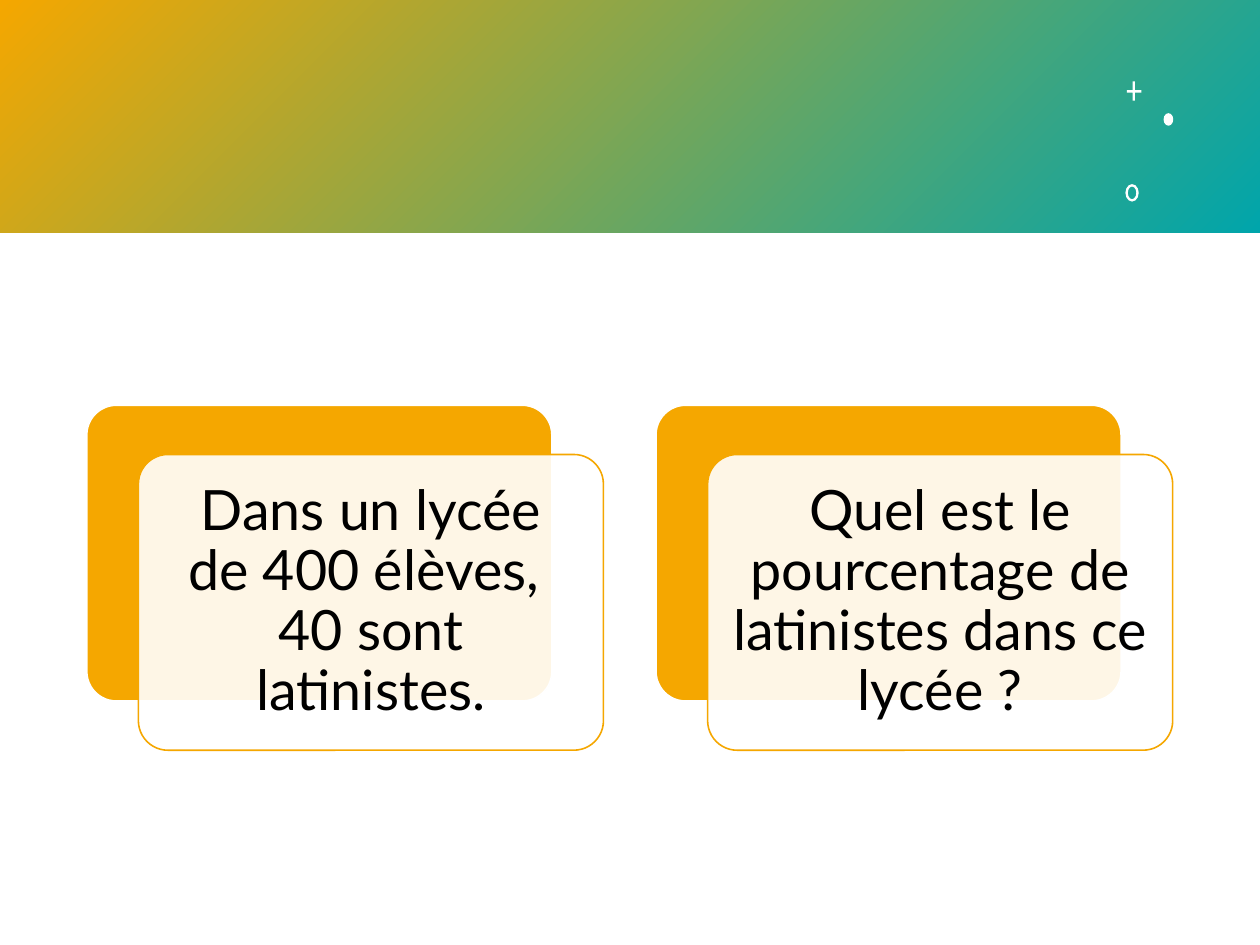
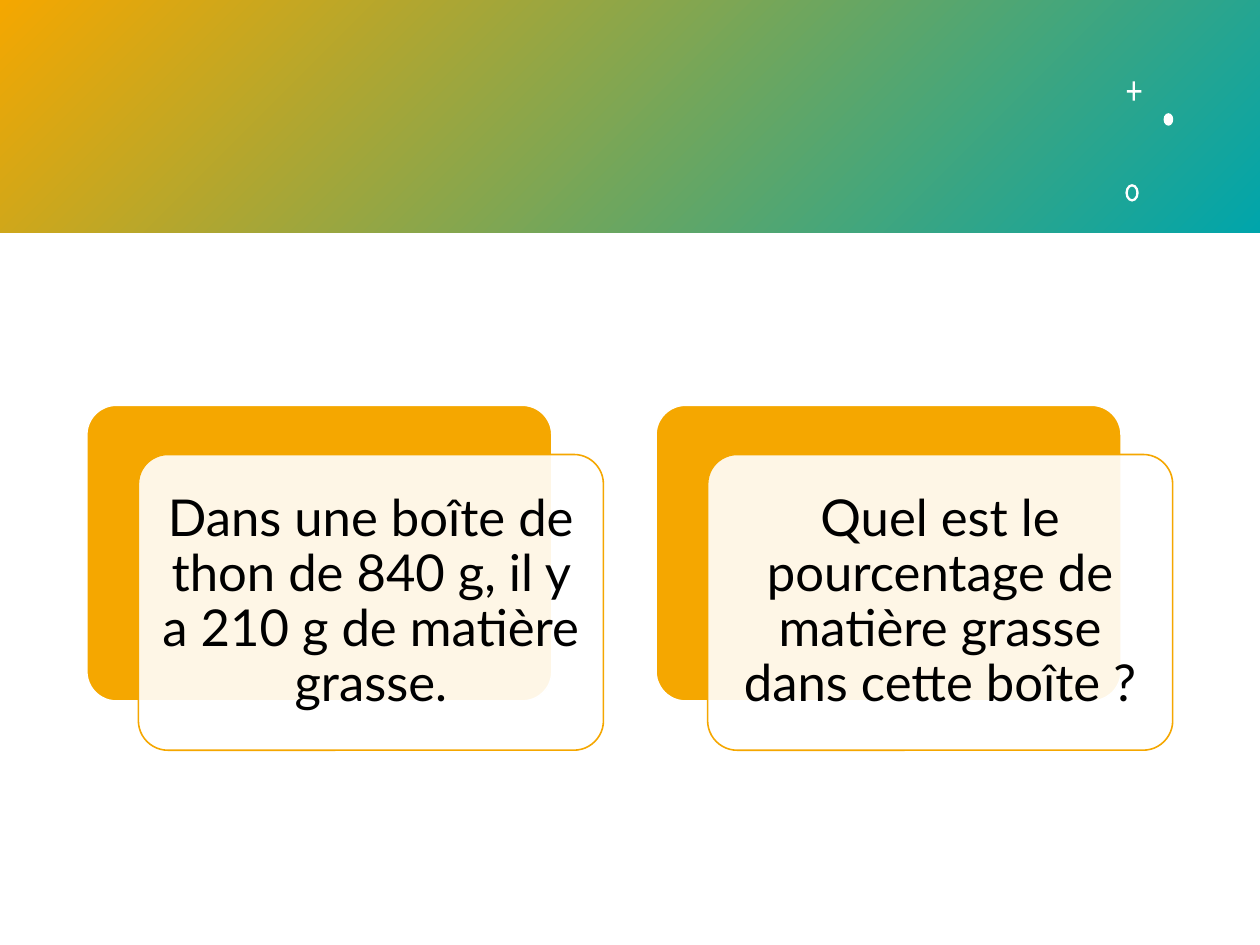
"""Build two percentage exercises, each with a fact card and a question card."""
from lxml.etree import SubElement
from pptx import Presentation
from pptx.dml.color import RGBColor
from pptx.enum.shapes import MSO_SHAPE
from pptx.enum.text import MSO_ANCHOR, PP_ALIGN
from pptx.oxml.ns import qn
from pptx.util import Pt

ORANGE, TEAL, WHITE, BLACK = "F5A700", "00A5AB", "FFFFFF", "000000"
FONT = "Lato"
WIDTH, HEIGHT, BAND_HEIGHT = 793.75, 595.25, 146.6
CARD_WIDTH, CARD_HEIGHT = 293, 186.3
CARD_LEFT, CARD_TOP, CARD_STEP = 54.7, 255.3, 358.6
FRONT_SHIFT_X, FRONT_SHIFT_Y = 32.5, 31

EXERCISES = [
    (35, [["Dans un lycée de 400 élèves, ", "40 sont latinistes."],
          ["Quel est le pourcentage de latinistes dans ce lycée ?"]]),
    (32, [["Dans une boîte de thon de 840 g, il y a 210 g de matière grasse."],
          ["Quel est le pourcentage de matière grasse dans cette boîte ?"]]),
]

PLUS_OUTLINE = [
    (713.5, 51.3), (715, 51.3), (715, 56.8), (719, 56.8), (719, 58.3), (715, 58.3),
    (715, 63.4), (713.5, 63.4), (713.5, 58.3), (709.9, 58.3), (709.9, 56.8), (713.5, 56.8),
]


def rgb(value):
    return RGBColor.from_string(value)


def paint(shape, fill, line=None):
    shape.shadow.inherit = False
    shape.fill.solid()
    shape.fill.fore_color.rgb = rgb(fill)
    if line:
        shape.line.color.rgb = rgb(line)
        shape.line.width = Pt(1)
    else:
        shape.line.fill.background()


deck = Presentation()
deck.slide_width, deck.slide_height = Pt(WIDTH), Pt(HEIGHT)

for text_size, cards in EXERCISES:
    slide = deck.slides.add_slide(deck.slide_layouts[6])
    shapes = slide.shapes

    band = shapes.add_shape(MSO_SHAPE.RECTANGLE, 0, 0, Pt(WIDTH), Pt(BAND_HEIGHT))
    band.shadow.inherit = False
    band.line.fill.background()
    band.fill.gradient()
    band.fill.gradient_angle = 315
    for stop, color in zip(band.fill.gradient_stops, (ORANGE, TEAL)):
        stop.color.rgb = rgb(color)

    corners = [(Pt(x), Pt(y)) for x, y in PLUS_OUTLINE]
    outline = shapes.build_freeform(*corners[0])
    outline.add_line_segments(corners[1:], close=True)
    plus = outline.convert_to_shape()
    dot = shapes.add_shape(MSO_SHAPE.OVAL, Pt(733), Pt(71.3), Pt(6.1), Pt(7.9))
    ring = shapes.add_shape(MSO_SHAPE.DONUT, Pt(709), Pt(116), Pt(8.4), Pt(11))
    ring.adjustments[0] = 0.18
    for ornament in (plus, dot, ring):
        paint(ornament, WHITE)

    for column, lines in enumerate(cards):
        left = CARD_LEFT + column * CARD_STEP
        back = shapes.add_shape(MSO_SHAPE.ROUNDED_RECTANGLE, Pt(left), Pt(CARD_TOP),
                                Pt(CARD_WIDTH), Pt(CARD_HEIGHT))
        front = shapes.add_shape(MSO_SHAPE.ROUNDED_RECTANGLE, Pt(left + FRONT_SHIFT_X),
                                 Pt(CARD_TOP + FRONT_SHIFT_Y), Pt(CARD_WIDTH), Pt(CARD_HEIGHT))
        for card, fill, line in ((back, ORANGE, WHITE), (front, WHITE, ORANGE)):
            card.adjustments[0] = 0.1
            paint(card, fill, line)
        front_color = front.fill._xPr.find(qn("a:solidFill")).find(qn("a:srgbClr"))
        SubElement(front_color, qn("a:alpha"), val="90000")

        frame = front.text_frame
        frame.word_wrap = True
        frame.vertical_anchor = MSO_ANCHOR.MIDDLE
        inset = Pt(0.3 * text_size)
        frame.margin_left = frame.margin_right = inset
        frame.margin_top = frame.margin_bottom = inset
        sentence = frame.paragraphs[0]
        sentence.alignment = PP_ALIGN.CENTER
        sentence.line_spacing = 0.9
        for number, text in enumerate(lines):
            if number:
                sentence.add_line_break()
            run = sentence.add_run()
            run.text = text
            run.font.name = FONT
            run.font.size = Pt(text_size)
            run.font.color.rgb = rgb(BLACK)

deck.save("out.pptx")
